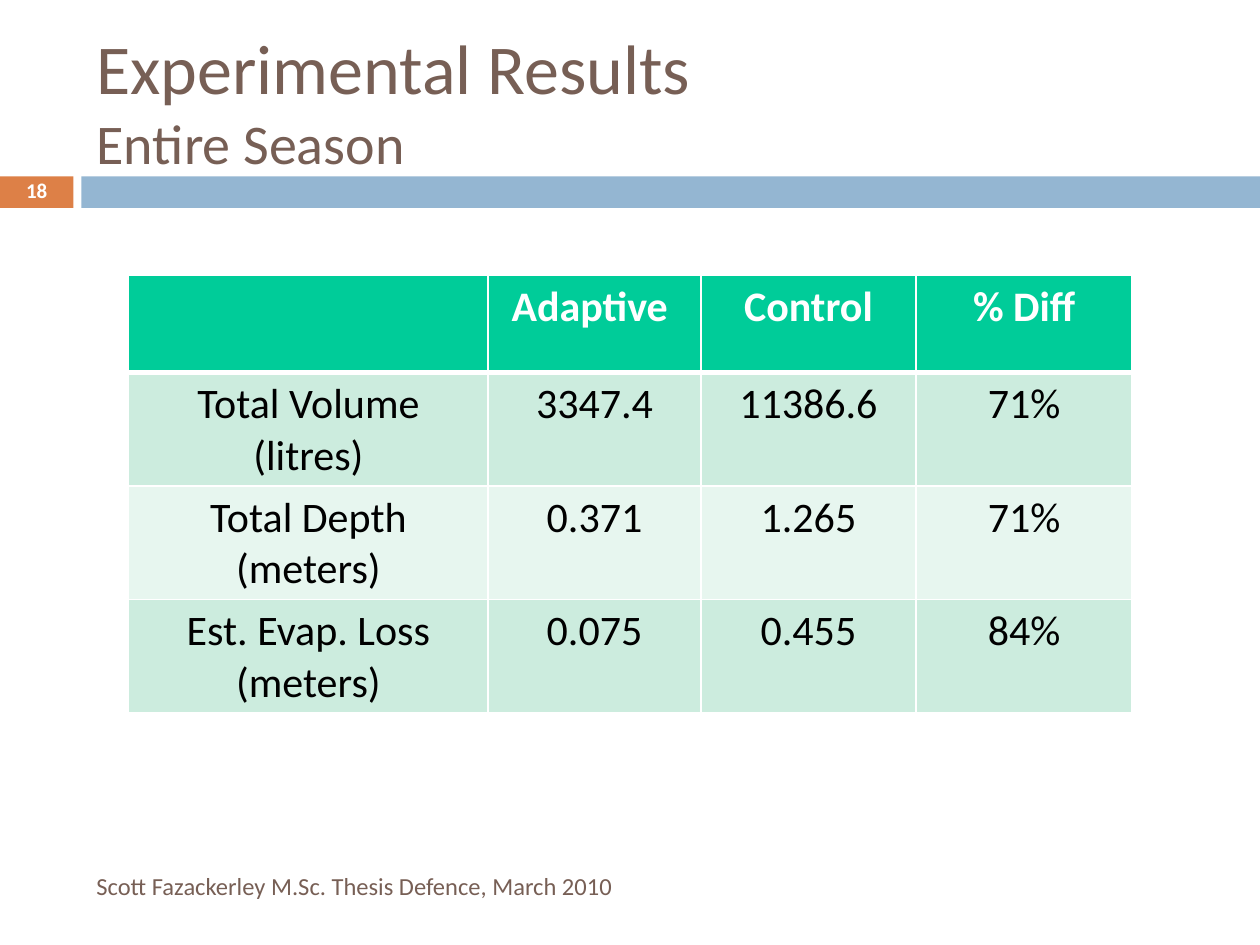
from pptx import Presentation
from pptx.dml.color import RGBColor
from pptx.enum import shapes, text
from pptx.oxml import parse_xml
from pptx.oxml.ns import nsdecls
from pptx.util import Pt

BROWN = RGBColor(0x77, 0x5F, 0x55)
ORANGE = RGBColor(0xDD, 0x80, 0x47)
BLUE = RGBColor(0x94, 0xB6, 0xD2)
GREEN = RGBColor(0x00, 0xCC, 0x99)
MINT = RGBColor(0xCC, 0xEC, 0xDE)
PALE = RGBColor(0xE7, 0xF6, 0xEF)
WHITE = RGBColor(0xFF, 0xFF, 0xFF)
BLACK = RGBColor(0, 0, 0)


def write(p, content, size, color, bold=False, align=text.PP_ALIGN.LEFT):
    p.alignment = align
    r = p.add_run()
    r.text = content
    r.font.name = "Calibri"
    r.font.size = Pt(size)
    r.font.bold = bold
    r.font.color.rgb = color


prs = Presentation()
prs.slide_width, prs.slide_height = Pt(720), Pt(540)
s = prs.slides.add_slide(prs.slide_layouts[5])

for left, width, color in [(0, 42, ORANGE), (46.5, 673.5, BLUE)]:
    sp = s.shapes.add_shape(shapes.MSO_SHAPE.RECTANGLE, Pt(left), Pt(100.8), Pt(width), Pt(18))
    sp.shadow.inherit = False
    sp.fill.solid()
    sp.fill.fore_color.rgb = color
    sp.line.fill.background()

title = s.shapes.title
title.left, title.top, title.width, title.height = Pt(48), Pt(18), Pt(642), Pt(78)
tf = title.text_frame
tf.auto_size = text.MSO_AUTO_SIZE.NONE
tf.vertical_anchor = text.MSO_ANCHOR.MIDDLE
write(tf.paragraphs[0], "Experimental Results", 40, BROWN)
write(tf.add_paragraph(), "Entire Season", 32, BROWN)

number = s.shapes.add_textbox(Pt(0), Pt(100), Pt(42), Pt(19.5))
footer = s.shapes.add_textbox(Pt(48), Pt(492), Pt(427), Pt(28.8))
for box in (number, footer):
    box.text_frame.word_wrap = True
    box.text_frame.vertical_anchor = text.MSO_ANCHOR.MIDDLE
p = number.text_frame.paragraphs[0]
p.line_spacing = 0.8
write(p, "18", 12, WHITE, bold=True, align=text.PP_ALIGN.CENTER)
write(footer.text_frame.paragraphs[0], "Scott Fazackerley M.Sc. Thesis Defence, March 2010", 14, BROWN)

rows = [
    ["", "Adaptive ", "Control", "% Diff"],
    ["Total Volume (litres)", "3347.4", "11386.6", "71%"],
    ["Total Depth (meters)", "0.371", "1.265", "71%"],
    ["Est. Evap. Loss (meters)", "0.075", "0.455", "84%"],
]
table = s.shapes.add_table(4, 4, Pt(73.5), Pt(157.5), Pt(573.5), Pt(223.5)).table
for col, width in zip(table.columns, [205.5, 121.5, 123, 123.5]):
    col.width = Pt(width)
for i, (row, values) in enumerate(zip(table.rows, rows)):
    row.height = Pt(56 if i else 55.5)
    for cell, value in zip(row.cells, values):
        tcPr = cell._tc.get_or_add_tcPr()
        for side in "LRTB":
            heavy = (i == 0 and side == "B") or (i == 1 and side == "T")
            tcPr.append(parse_xml(
                f'<a:ln{side} {nsdecls("a")} w="{Pt(3 if heavy else 1)}">'
                f'<a:solidFill><a:srgbClr val="{WHITE}"/></a:solidFill></a:ln{side}>'))
        cell.fill.solid()
        cell.fill.fore_color.rgb = GREEN if i == 0 else MINT if i % 2 else PALE
        if value:
            write(cell.text_frame.paragraphs[0], value, 24, BLACK if i else WHITE,
                  bold=i == 0, align=text.PP_ALIGN.CENTER)

prs.save("out.pptx")
